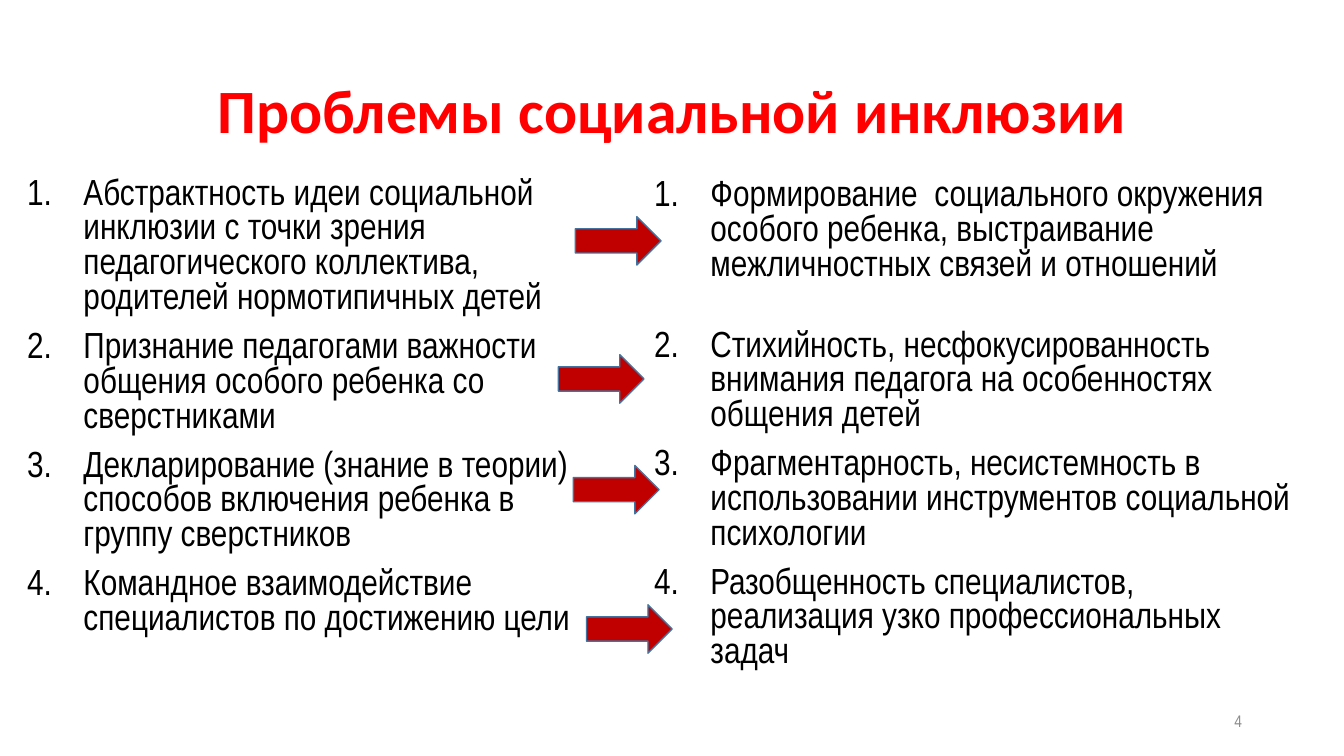
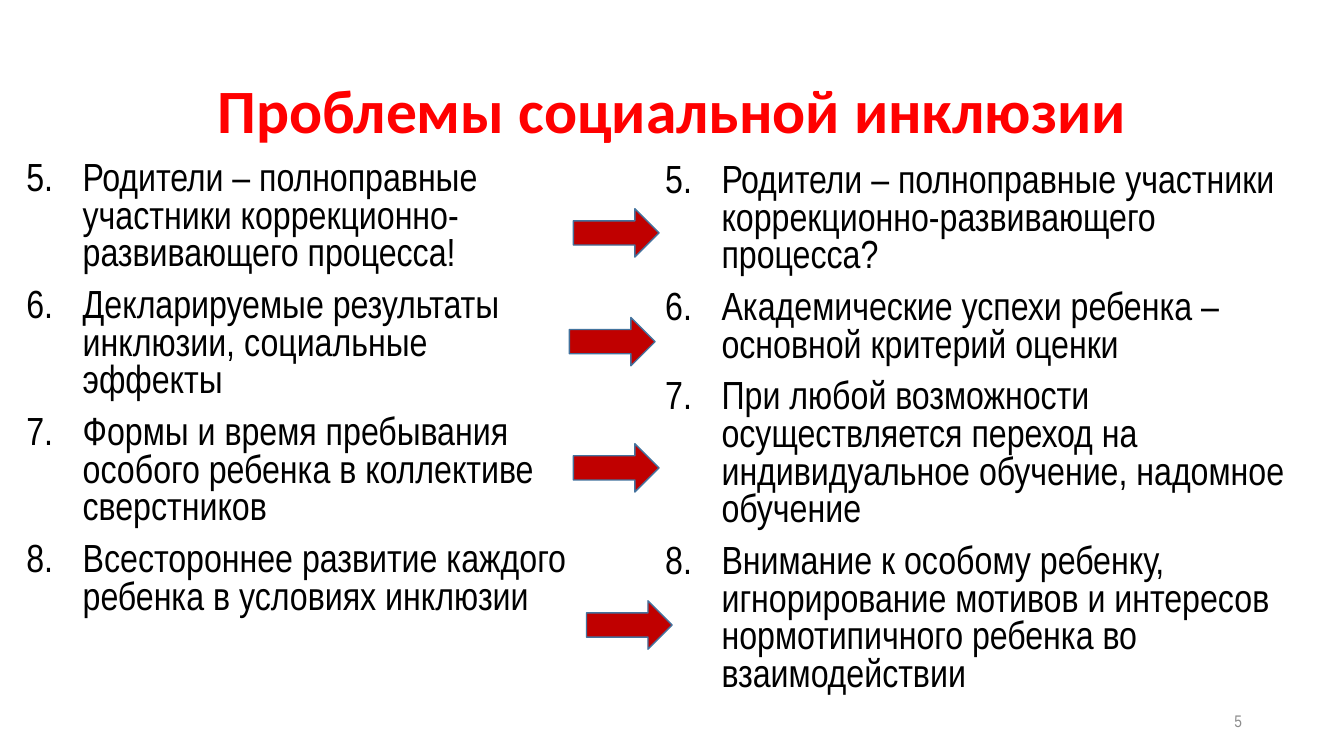
from lxml import etree
from pptx import Presentation
from pptx.dml.color import RGBColor
from pptx.enum.shapes import MSO_SHAPE
from pptx.enum.text import MSO_ANCHOR, MSO_AUTO_SIZE, PP_ALIGN
from pptx.oxml.ns import qn
from pptx.util import Cm, Pt

ARROW = MSO_SHAPE.RIGHT_ARROW
TOP, MIDDLE = MSO_ANCHOR.TOP, MSO_ANCHOR.MIDDLE
CENTER, RIGHT = PP_ALIGN.CENTER, PP_ALIGN.RIGHT
FIXED = MSO_AUTO_SIZE.NONE

# Shared look
RED = RGBColor(0xFF, 0x00, 0x00)
BRICK = RGBColor(0xC0, 0x00, 0x00)
BLUE = RGBColor(0x43, 0x73, 0x9E)
BLACK = RGBColor(0x00, 0x00, 0x00)
GRAY = RGBColor(0x8C, 0x8C, 0x8C)
HEAD_FONT, BODY_FONT = "Calibri", "Arial Narrow"
TITLE = "Проблемы социальной инклюзии"
INDENT = Cm(1.42)
GAP, WIDE_GAP = 10, 33
TWO_LISTS = 3

# Content: lists are (left, top, width, height), items; arrows are (left, top)
SLIDES = [
    {
        "page": 4, "start": 1, "size": 25.9, "gaps": {1: WIDE_GAP},
        "lists": [
            ((0.43, 4.34, 14.33, 13.26), [
                "Абстрактность идеи социальной инклюзии с точки зрения "
                "педагогического коллектива,\nродителей нормотипичных детей",
                "Признание педагогами важности общения особого ребенка со сверстниками",
                "Декларирование (знание в теории) способов включения ребенка "
                "в группу сверстников",
                "Командное взаимодействие специалистов по достижению цели",
            ]),
            ((16.23, 4.37, 16.81, 13.69), [
                "Формирование  социального окружения особого ребенка, "
                "выстраивание межличностных связей и отношений",
                "Стихийность, несфокусированность внимания педагога "
                "на особенностях общения детей",
                "Фрагментарность, несистемность в использовании инструментов "
                "социальной психологии",
                "Разобщенность специалистов, реализация узко профессиональных задач",
            ]),
        ],
        "arrows": [(14.5, 5.46), (14.07, 8.94), (14.45, 11.73), (14.78, 15.24)],
    },
    {
        "page": 5, "start": 5, "size": 28, "gaps": {},
        "lists": [
            ((0.41, 3.94, 14.33, 13.26), [
                "Родители – полноправные участники коррекционно-развивающего процесса!",
                "Декларируемые результаты инклюзии, социальные эффекты",
                "Формы и время пребывания особого ребенка в коллективе сверстников",
                "Всестороннее развитие каждого ребенка в условиях инклюзии",
            ]),
            ((16.51, 3.99, 16.81, 13.69), [
                "Родители – полноправные участники коррекционно-развивающего процесса?",
                "Академические успехи ребенка – основной критерий оценки",
                "При любой возможности осуществляется переход на "
                "индивидуальное обучение, надомное обучение",
                "Внимание к особому ребенку, игнорирование мотивов и интересов "
                "нормотипичного ребенка во взаимодействии",
            ]),
        ],
        "arrows": [(14.45, 5.26), (14.35, 8), (14.45, 11.18), (14.78, 15.14)],
    },
]


def place(shape, box):
    shape.left, shape.top, shape.width, shape.height = map(Cm, box)


def set_frame(shape, anchor):
    frame = shape.text_frame
    frame.word_wrap = True
    frame.auto_size = FIXED
    frame.vertical_anchor = anchor
    return frame


def add_run(para, text, font, size, color, bold=False):
    run = para.add_run()
    run.text = text
    run.font.name = font
    run.font.size = Pt(size)
    run.font.color.rgb = color
    run.font.bold = bold


def add_title(slide):
    shape = slide.shapes.title
    place(shape, (2.34, 1.02, 29.21, 3.68))
    para = set_frame(shape, MIDDLE).paragraphs[0]
    para.alignment = CENTER
    para.line_spacing = 0.9
    add_run(para, TITLE, HEAD_FONT, 44, RED, True)


def number(para, start):
    props = para._p.get_or_add_pPr()
    props.set("marL", str(INDENT))
    props.set("indent", str(-INDENT))
    face = etree.SubElement(props, qn("a:buFont"))
    face.set("typeface", BODY_FONT)
    auto = etree.SubElement(props, qn("a:buAutoNum"))
    auto.set("type", "arabicPeriod")
    auto.set("startAt", str(start))


def fill_list(shape, box, items, start, size, gaps):
    place(shape, box)
    frame = set_frame(shape, TOP)
    for i, item in enumerate(items):
        para = frame.add_paragraph() if i else frame.paragraphs[0]
        number(para, start)
        para.line_spacing = 0.8
        para.space_before = Pt(gaps.get(i, GAP) if i else 0)
        for j, line in enumerate(item.split("\n")):
            if j:
                para.add_line_break()
            add_run(para, line, BODY_FONT, size, BLACK)


def add_arrow(slide, left, top):
    arrow = slide.shapes.add_shape(ARROW, Cm(left), Cm(top), Cm(2.16), Cm(1.22))
    arrow.shadow.inherit = False
    arrow.fill.solid()
    arrow.fill.fore_color.rgb = BRICK
    arrow.line.color.rgb = BLUE
    arrow.line.width = Pt(1)


def add_page(slide, page):
    box = slide.shapes.add_textbox(Cm(23.93), Cm(17.65), Cm(7.62), Cm(1.02))
    para = set_frame(box, MIDDLE).paragraphs[0]
    para.alignment = RIGHT
    add_run(para, str(page), BODY_FONT, 12, GRAY)


def main():
    prs = Presentation()
    prs.slide_width, prs.slide_height = Cm(33.87), Cm(19.05)
    for data in SLIDES:
        slide = prs.slides.add_slide(prs.slide_layouts[TWO_LISTS])
        add_title(slide)
        # Paired lists: the gap widens only in the right one
        for idx, (box, items) in enumerate(data["lists"], 1):
            gaps = data["gaps"] if idx == 2 else {}
            fill_list(slide.placeholders[idx], box, items,
                      data["start"], data["size"], gaps)
        add_page(slide, data["page"])
        for left, top in data["arrows"]:
            add_arrow(slide, left, top)
    prs.save("out.pptx")


if __name__ == "__main__":
    main()
